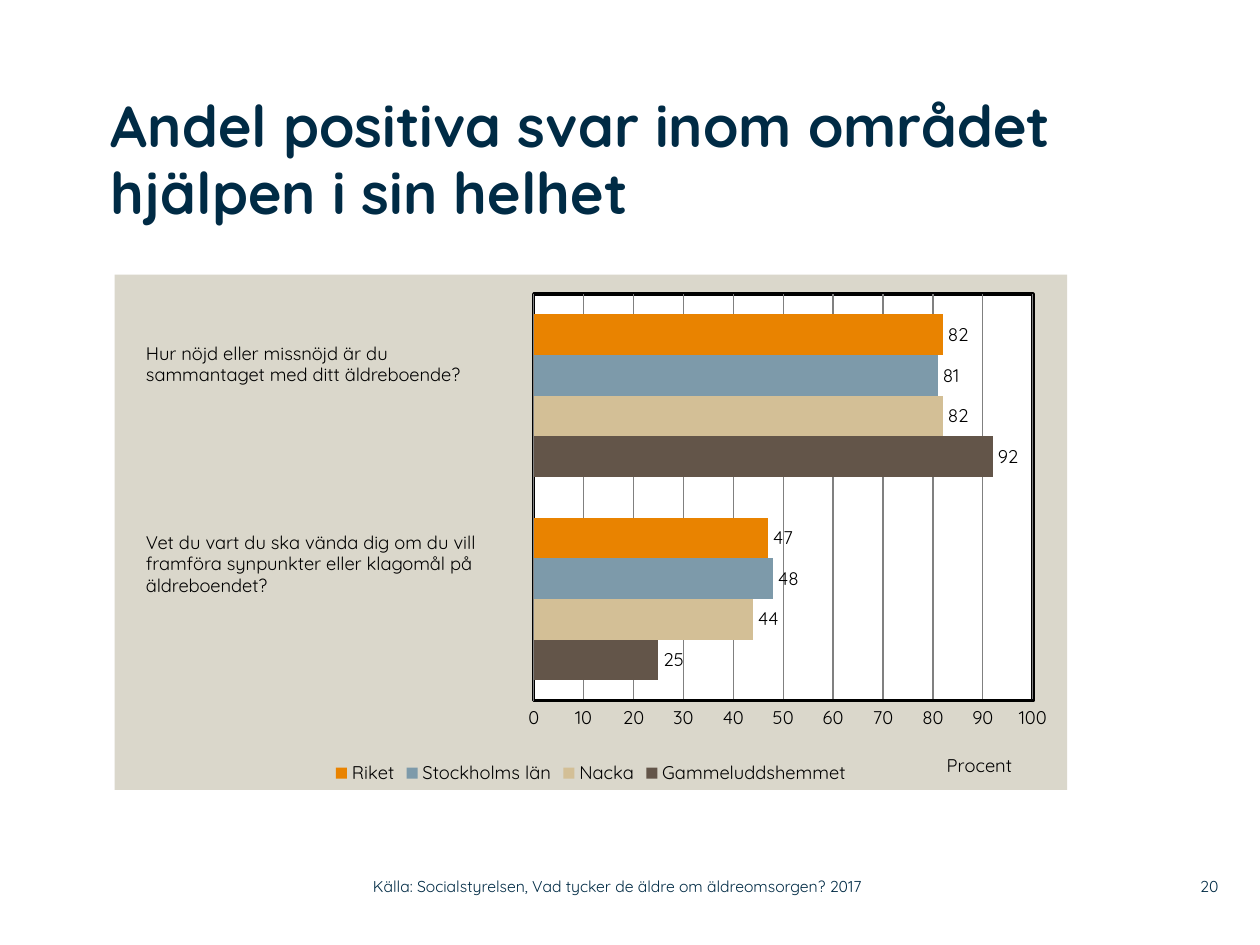
from collections import namedtuple
from dataclasses import dataclass

from lxml import etree
from pptx import Presentation
from pptx.chart.data import CategoryChartData
from pptx.dml.color import RGBColor
from pptx.enum.chart import XL_CHART_TYPE, XL_LABEL_POSITION, XL_LEGEND_POSITION, XL_TICK_MARK
from pptx.enum.text import MSO_ANCHOR, PP_ALIGN
from pptx.oxml import parse_xml
from pptx.oxml.ns import nsdecls, qn
from pptx.util import Inches, Pt

Box = namedtuple("Box", "left top width height")


@dataclass(frozen=True)
class Theme:
    """Fonts, type sizes and colours of the slide."""
    font: str = "Quicksand"
    title_size: float = 33
    body_size: float = 10.5
    footer_size: float = 9
    navy: str = "002B45"
    black: str = "000000"
    grid: str = "808080"
    panel: str = "DAD7CB"
    plot: str = "FFFFFF"


THEME = Theme()
SERIES = [
    ("Gammeluddshemmet", (25, 92), "635549"),
    ("Nacka", (44, 82), "D3BF96"),
    ("Stockholms län", (48, 81), "7D9AAA"),
    ("Riket", (47, 82), "E98300"),
]
QUESTIONS = [
    (Box(1.06, 2.68, 2.98, 0.45),
     ["Hur nöjd eller missnöjd är du", "sammantaget med ditt äldreboende?"]),
    (Box(1.06, 4.18, 2.97, 0.63),
     ["Vet du vart du ska vända dig om du vill framföra synpunkter "
      "eller klagomål på äldreboendet?"]),
]


def style_font(font, size=THEME.body_size, color=THEME.black, bold=False):
    """Apply the theme font with a size, colour and weight."""
    font.name = THEME.font
    font.size = Pt(size)
    font.bold = bold
    font.color.rgb = RGBColor.from_string(color)


def write_text(shape, lines, align=PP_ALIGN.LEFT, anchor=MSO_ANCHOR.TOP,
               inset=None, spacing=0.96, **font_format):
    """Fill a shape with formatted paragraphs."""
    frame = shape.text_frame
    frame.word_wrap = True
    frame.vertical_anchor = anchor
    if inset is not None:
        frame.margin_left = frame.margin_right = Inches(inset)
        frame.margin_top = frame.margin_bottom = Inches(inset)
    for index, line in enumerate(lines):
        para = frame.add_paragraph() if index else frame.paragraphs[0]
        para.alignment = align
        para.line_spacing = spacing
        span = para.add_run()
        span.text = line
        style_font(span.font, **font_format)


def fill_solid(fill, color):
    """Give a fill one solid colour."""
    fill.solid()
    fill.fore_color.rgb = RGBColor.from_string(color)


def fill_element(parent, color, line_width=None):
    """Append solid fill, and optionally a black border, to a chart part."""
    border = ""
    if line_width:
        border = (f'<a:ln w="{Pt(line_width)}"><a:solidFill>'
                  f'<a:srgbClr val="{THEME.black}"/></a:solidFill></a:ln>')
    return parse_xml(f'<c:spPr {nsdecls("c", "a")}><a:solidFill><a:srgbClr val="{color}"/>'
                     f'</a:solidFill>{border or "<a:ln><a:noFill/></a:ln>"}</c:spPr>')


def manual_layout(left, top, width=None, height=None):
    """Return a chart layout given as fractions of the chart."""
    layout = etree.Element(qn("c:layout"))
    manual = etree.SubElement(layout, qn("c:manualLayout"))
    values = [("xMode", "edge"), ("yMode", "edge"), ("x", left), ("y", top)]
    if width:
        values = [("layoutTarget", "inner"), *values, ("w", width), ("h", height)]
    for name, value in values:
        etree.SubElement(manual, qn(f"c:{name}")).set("val", str(value))
    return layout


def replace_layout(parent, layout, index):
    """Put a layout at an index, in place of any other."""
    for old in parent.findall(qn("c:layout")):
        parent.remove(old)
    parent.insert(index, layout)


def format_value_axis(axis):
    """Set the percentage scale, gridlines and axis title."""
    axis.minimum_scale, axis.maximum_scale, axis.major_unit = 0, 100, 10
    axis.major_tick_mark = axis.minor_tick_mark = XL_TICK_MARK.NONE
    axis.has_major_gridlines = True
    grid = axis.major_gridlines.format.line
    grid.width = Pt(0.75)
    grid.color.rgb = RGBColor.from_string(THEME.grid)
    axis.format.line.width = Pt(2)
    axis.format.line.color.rgb = RGBColor.from_string(THEME.black)
    style_font(axis.tick_labels.font)
    span = axis.axis_title.text_frame.paragraphs[0].add_run()
    span.text = "Procent"
    style_font(span.font)
    title = axis.axis_title._element
    replace_layout(title, manual_layout(0.87, 0.92), 1)


def add_bar_chart(page, box):
    """Draw the panel with clustered bars for the two questions."""
    data = CategoryChartData()
    data.categories = ["1", "2"]
    for name, values, _ in SERIES:
        data.add_series(name, values)
    chart = page.shapes.add_chart(
        XL_CHART_TYPE.BAR_CLUSTERED, *map(Inches, box), data).chart
    style_font(chart.font)
    chart.has_title = False
    chart.category_axis.visible = False
    format_value_axis(chart.value_axis)

    plot = chart.plots[0]
    plot.gap_width, plot.overlap, plot.vary_by_categories = 100, 0, False
    for series, (_, _, color) in zip(plot.series, SERIES):
        fill_solid(series.format.fill, color)
        labels = series.data_labels
        labels.show_value = True
        labels.position = XL_LABEL_POSITION.OUTSIDE_END
        style_font(labels.font)

    chart.has_legend = True
    chart.legend.position = XL_LEGEND_POSITION.BOTTOM
    chart.legend.include_in_layout = False
    style_font(chart.legend.font)

    root = chart._chartSpace
    area = root.find(qn("c:chart")).find(qn("c:plotArea"))
    replace_layout(area, manual_layout(0.44, 0.038, 0.524, 0.789), 0)
    area.append(fill_element(area, THEME.plot, 2))
    root.find(qn("c:chart")).addnext(fill_element(root, THEME.panel))


def add_title(page, box):
    """Place the slide title in its placeholder."""
    title = page.shapes.title
    title.left, title.top, title.width, title.height = map(Inches, box)
    write_text(title, ["Andel positiva svar inom området hjälpen i sin helhet"],
               inset=0, size=THEME.title_size, color=THEME.navy, bold=True)


def add_text(page, box, lines, **text_format):
    """Add a text box with formatted lines."""
    write_text(page.shapes.add_textbox(*map(Inches, box)), lines, **text_format)


def add_footer(page, box):
    """Place the source and the page number on one row."""
    row = {"anchor": MSO_ANCHOR.MIDDLE, "inset": 0, "spacing": 1,
           "size": THEME.footer_size, "color": THEME.navy}
    number_width = 0.47
    number_left = box.left + box.width - number_width
    add_text(page, Box(number_left, box.top, number_width, box.height), ["20"],
             align=PP_ALIGN.RIGHT, **row)
    add_text(page, box._replace(width=4.43),
             ["Källa: Socialstyrelsen, Vad tycker de äldre om äldreomsorgen? 2017"], **row)


def main():
    """Build and save the deck."""
    deck = Presentation()
    deck.slide_width, deck.slide_height = Inches(10), Inches(7.5)
    page = deck.slides.add_slide(deck.slide_layouts[5])
    add_bar_chart(page, Box(0.91, 2.18, 7.56, 4.09))
    add_title(page, Box(0.88, 0.75, 7.6, 1.42))
    for box, lines in QUESTIONS:
        add_text(page, box, lines)
    add_footer(page, Box(2.96, 6.89, 6.71, 0.29))
    deck.save("out.pptx")


if __name__ == "__main__":
    main()
